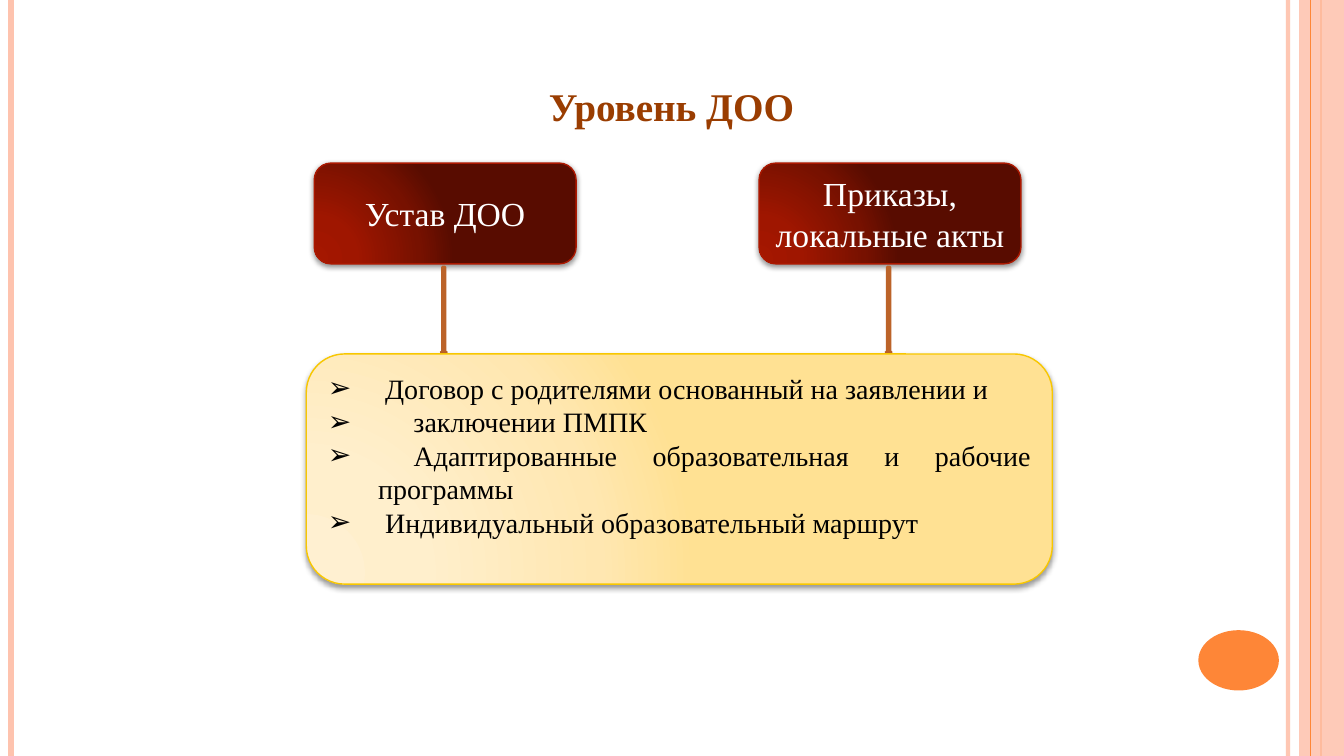
from dataclasses import dataclass

from lxml import etree
from pptx import Presentation
from pptx import util as u
from pptx.dml.color import RGBColor
from pptx.enum import shapes, text
from pptx.oxml.ns import qn

FONT = "Times New Roman"
BLACK = RGBColor(0x00, 0x00, 0x00)
WHITE = RGBColor(0xFF, 0xFF, 0xFF)
BROWN = RGBColor(0x9A, 0x3D, 0x01)
ORANGE = RGBColor(0xFE, 0x86, 0x37)
PEACH = RGBColor(0xFE, 0xC3, 0xAE)
RUST = RGBColor(0xBC, 0x63, 0x29)
RED = RGBColor(0xAC, 0x18, 0x00)
GOLD = RGBColor(0xF8, 0xC7, 0x00)
RED_STOPS = [(0, RGBColor(0xA4, 0x17, 0x00)), (30, RGBColor(0x9F, 0x16, 0x00)),
             (75, RGBColor(0x77, 0x11, 0x00)), (100, RGBColor(0x58, 0x0C, 0x00))]
CREAM_STOPS = [(0, RGBColor(0xFF, 0xF0, 0xD1)), (30, RGBColor(0xFF, 0xEF, 0xCC)),
               (75, RGBColor(0xFF, 0xE7, 0xB1)), (100, RGBColor(0xFF, 0xE1, 0x93))]

DOCUMENTS = ["Устав ДОО", "Приказы, локальные акты"]
CONTENTS = [
    (" Договор с родителями основанный на заявлении и", 1.27),
    ("заключении ПМПК", 2.16),
    (" Адаптированные образовательная и рабочие программы", 1.27),
    (" Индивидуальный образовательный маршрут", 1.27),
]


@dataclass
class Box:
    left: float
    top: float
    width: float
    height: float

    def lengths(self):
        return [u.Cm(value) for value in (self.left, self.top, self.width, self.height)]


def add_element(parent, tag, **attributes):
    return etree.SubElement(parent, qn(tag), {key: str(value) for key, value in attributes.items()})


def set_opacity(element, percent):
    for color in element.iter(qn("a:srgbClr")):
        add_element(color, "a:alpha", val=percent * 1000)


def add_plain_shape(page, kind, box, color):
    shape = page.shapes.add_shape(kind, *box.lengths())
    shape.shadow.inherit = False
    shape.fill.solid()
    shape.fill.fore_color.rgb = color
    shape.line.fill.background()
    return shape


def add_card(page, box, stops, outline, shadow_opacity, shadow_distance):
    card = add_plain_shape(page, shapes.MSO_SHAPE.ROUNDED_RECTANGLE, box, outline)
    card.line.color.rgb = outline
    card.line.width = u.Pt(1)
    card.fill.gradient()
    properties = card._element.spPr
    gradient = properties.find(qn("a:gradFill"))
    for child in list(gradient):
        gradient.remove(child)
    stop_list = add_element(gradient, "a:gsLst")
    for position, color in stops:
        stop = add_element(stop_list, "a:gs", pos=position * 1000)
        add_element(stop, "a:srgbClr", val=color)
    circle = add_element(gradient, "a:path", path="circle")
    add_element(circle, "a:fillToRect", l=5000, t=100000, r=120000, b=10000)
    shadow = add_element(properties.find(qn("a:effectLst")), "a:outerShdw",
                         blurRad=u.Pt(4), dist=u.Pt(shadow_distance), dir=5400000, rotWithShape=0)
    add_element(shadow, "a:srgbClr", val=BLACK)
    set_opacity(shadow, shadow_opacity)
    return card


def format_paragraph(para, size, color, alignment, bold=False):
    para.alignment = alignment
    para.font.name = FONT
    para.font.size = u.Pt(size)
    para.font.color.rgb = color
    para.font.bold = bold


def clear_frame(frame, anchor):
    frame.auto_size = text.MSO_AUTO_SIZE.NONE
    frame.word_wrap = True
    frame.vertical_anchor = anchor
    frame.margin_left = frame.margin_right = frame.margin_top = frame.margin_bottom = 0


def draw_rule(page, box, offset, color, width, opacity=100):
    left = u.Cm(box.left + offset)
    rule = page.shapes.add_connector(shapes.MSO_CONNECTOR.STRAIGHT, left, u.Cm(box.top),
                                     left, u.Cm(box.top + box.height))
    rule.line.color.rgb = color
    rule.line.width = u.Pt(width)
    if opacity < 100:
        set_opacity(rule.line._ln, opacity)
    add_element(rule._element.spPr, "a:effectLst")


def draw_frame(page, box):
    draw_rule(page, box, 32.46, PEACH, 3, 93)
    draw_rule(page, box, 0.28, PEACH, 4.5)
    draw_rule(page, box, 33.3, ORANGE, 1.5)
    band = Box(box.left + 32.74, box.top, box.width - 32.74, box.height)
    stripe = add_plain_shape(page, shapes.MSO_SHAPE.RECTANGLE, band, PEACH)
    set_opacity(stripe._element.spPr, 87)
    draw_rule(page, box, 33.02, ORANGE, 0.75)
    badge = Box(box.left + 30.2, box.top + 15.88, 2.03, 1.52)
    add_plain_shape(page, shapes.MSO_SHAPE.OVAL, badge, ORANGE)


def draw_title(page, box):
    title = page.shapes.title
    title.left, title.top, title.width, title.height = box.lengths()
    clear_frame(title.text_frame, text.MSO_ANCHOR.MIDDLE)
    title.text_frame.text = "Уровень ДОО"
    format_paragraph(title.text_frame.paragraphs[0], 28, BROWN, text.PP_ALIGN.CENTER, True)


def draw_documents(page, box):
    width, height = 6.6, 2.54
    step = (box.width - width) / (len(DOCUMENTS) - 1)
    for index, name in enumerate(DOCUMENTS):
        left = box.left + index * step
        card = add_card(page, Box(left, box.top, width, height), RED_STOPS, RED, 42, 1.6)
        frame = card.text_frame
        frame.word_wrap = True
        frame.vertical_anchor = text.MSO_ANCHOR.MIDDLE
        frame.text = name
        format_paragraph(frame.paragraphs[0], 24, WHITE, text.PP_ALIGN.CENTER)
        stem = Box(left + width / 2 - 0.1, box.top + height + 0.08, 0.13, box.height - height - 0.08)
        arrow = add_plain_shape(page, shapes.MSO_SHAPE.DOWN_ARROW, stem, ORANGE)
        arrow.line.color.rgb = RUST
        arrow.line.width = u.Pt(2)


def draw_contents(page, box):
    add_card(page, box, CREAM_STOPS, GOLD, 40, 2)
    body = page.placeholders[1]
    page.shapes._spTree.append(body._element)
    inner = Box(box.left + 0.54, box.top + 0.43, box.width - 1.08, box.height - 0.86)
    body.left, body.top, body.width, body.height = inner.lengths()
    frame = body.text_frame
    clear_frame(frame, text.MSO_ANCHOR.TOP)
    for index, (item, indent) in enumerate(CONTENTS):
        para = frame.add_paragraph() if index else frame.paragraphs[0]
        para.text = item
        para.space_before = u.Pt(0)
        properties = para._p.get_or_add_pPr()
        properties.set("marL", str(u.Cm(indent)))
        properties.set("indent", str(-u.Cm(indent)))
        add_element(properties, "a:buFont", typeface="Wingdings")
        properties[-1].set("typeface", "Arial")
        add_element(properties, "a:buChar", char="➢")
        format_paragraph(para, 20, BLACK, text.PP_ALIGN.JUSTIFY)


def main():
    deck = Presentation()
    deck.slide_width, deck.slide_height = u.Cm(33.87), u.Cm(19.05)
    page = deck.slides.add_slide(deck.slide_layouts[1])
    draw_frame(page, Box(0, 0, 33.87, 19.05))
    draw_title(page, Box(13.54, 1.93, 6.76, 1.45))
    draw_documents(page, Box(7.92, 4.11, 17.81, 4.83))
    draw_contents(page, Box(7.72, 8.92, 18.8, 5.8))
    deck.save("out.pptx")


if __name__ == "__main__":
    main()
